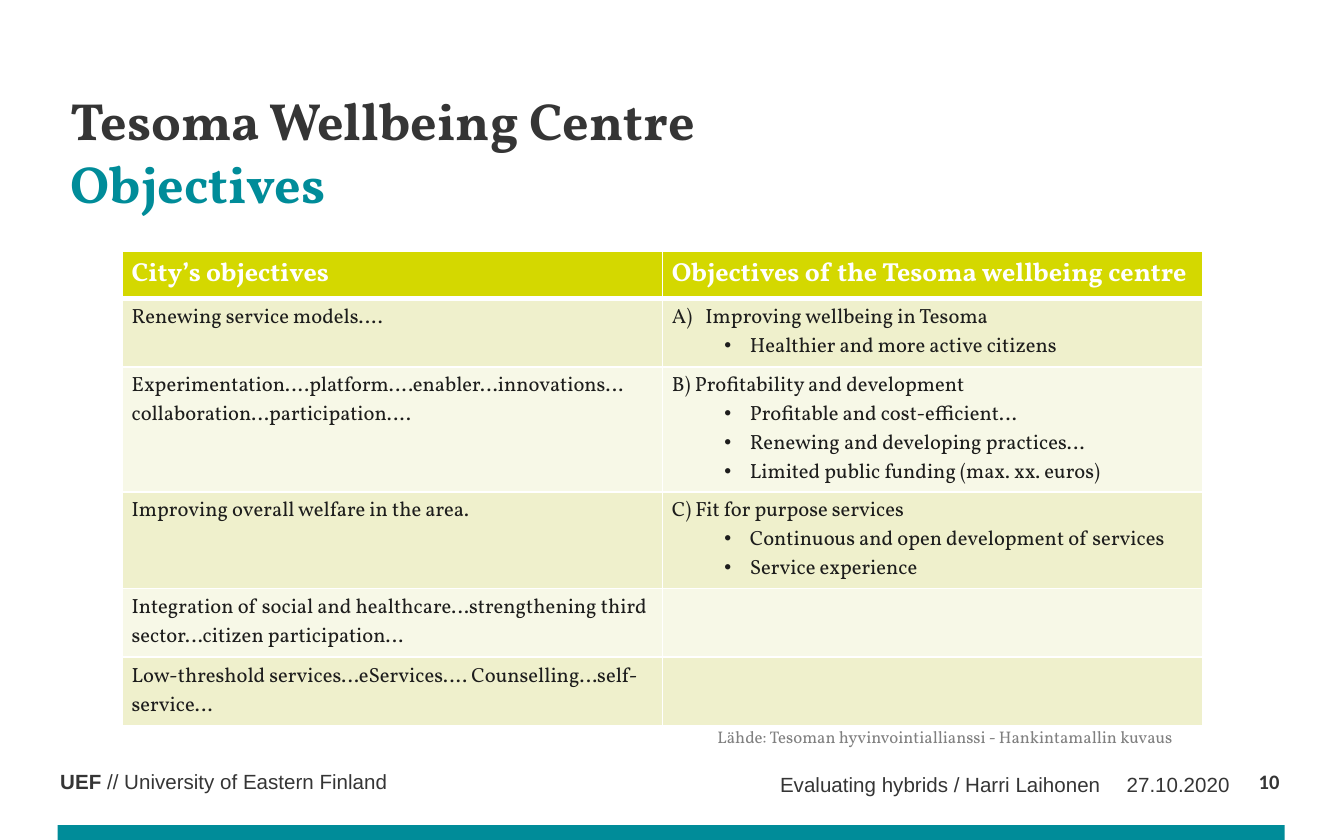
from lxml.etree import SubElement
from pptx import Presentation
from pptx.dml.color import RGBColor
from pptx.enum.shapes import MSO_SHAPE
from pptx.enum.text import MSO_ANCHOR, PP_ALIGN
from pptx.oxml.ns import qn
from pptx.util import Inches, Pt

DARK, TEAL, WHITE = "353535", "008C99", "FFFFFF"
HEADERS = ["City’s objectives", "Objectives of the Tesoma wellbeing centre"]
ROWS = [
    (0.51, "Renewing service models….",
     ["Improving wellbeing in Tesoma", "Healthier and more active citizens"]),
    (0.93, "Experimentation….platform….enabler...innovations…\vcollaboration…participation….",
     ["B) Profitability and development", "Profitable and cost-efficient…",
      "Renewing and developing practices…", "Limited public funding (max. xx. euros)"]),
    (0.72, "Improving overall welfare in the area.",
     ["C) Fit for purpose services", "Continuous and open development of services",
      "Service experience"]),
    (0.51, "Integration of social and healthcare…strengthening third sector…citizen participation…", []),
    (0.51, "Low-threshold services…eServices…. Counselling…self-service…", []),
]


def color(value):
    """Turn a hex string into a colour."""
    return RGBColor.from_string(value)


def style(target, size, name, value, bold=False):
    """Set the font of a paragraph or a span."""
    font = target.font
    font.size, font.name, font.bold = Pt(size), name, bold
    font.color.rgb = color(value)


def add_box(page, left, top, width, height, inset=None, anchor=MSO_ANCHOR.TOP, wrap=True):
    """Add a text box and return its text frame."""
    box = page.shapes.add_textbox(Inches(left), Inches(top), Inches(width), Inches(height))
    frame = box.text_frame
    frame.word_wrap, frame.vertical_anchor = wrap, anchor
    if inset is not None:
        frame.margin_left = frame.margin_right = Inches(inset)
        frame.margin_top = frame.margin_bottom = Inches(inset)
    return frame


def add_line(page, text, place, size, name, value, bold=False, align=PP_ALIGN.LEFT, **options):
    """Add a text box with one line and return its paragraph."""
    para = add_box(page, *place, **options).paragraphs[0]
    para.text, para.alignment = text, align
    style(para, size, name, value, bold)
    return para


def add_title(page):
    """Add the two-colour title."""
    para = add_box(page, 0.43, 0.6, 9.13, 0.92).paragraphs[0]
    para.line_spacing = Pt(34)
    for text, value in (("Tesoma Wellbeing Centre", DARK), ("Objectives", TEAL)):
        if para.runs:
            para.add_line_break()
        span = para.add_run()
        span.text = text
        style(span, 28, "Vollkorn", value, True)


def add_bar(page):
    """Add the teal bar at the foot of the page."""
    bar = page.shapes.add_shape(MSO_SHAPE.RECTANGLE, Inches(0.43), Inches(6.14),
                                Inches(9.13), Inches(0.13))
    bar.shadow.inherit = False
    bar.fill.solid()
    bar.fill.fore_color.rgb = color(TEAL)
    bar.line.fill.background()


def set_list(para, margin, indent, tag, **mark):
    """Give a paragraph a hanging bullet or number."""
    properties = para._p.get_or_add_pPr()
    properties.set("marL", str(Inches(margin)))
    properties.set("indent", str(Inches(indent)))
    bullet = SubElement(properties, qn(tag), **mark)
    default = properties.find(qn("a:defRPr"))
    if default is not None:
        default.addprevious(bullet)


def set_borders(cell, top, bottom):
    """Draw white borders of the given point widths at top and bottom."""
    properties = cell._tc.get_or_add_tcPr()
    for index, (side, width) in enumerate((("L", 1), ("R", 1), ("T", top), ("B", bottom))):
        line = SubElement(properties, qn(f"a:ln{side}"), w=str(Pt(width)))
        fill = SubElement(line, qn("a:solidFill"))
        SubElement(fill, qn("a:srgbClr"), val=WHITE)
        properties.insert(index, line)


def fill_cell(cell, lines, fill, size, value, header=False, below_header=False):
    """Fill one cell with a lead line and bulleted lines below it."""
    cell.margin_left = cell.margin_right = Inches(0.07)
    cell.margin_top = cell.margin_bottom = Inches(0.04)
    cell.fill.solid()
    cell.fill.fore_color.rgb = color(fill)
    set_borders(cell, 3 if below_header else 1, 3 if header else 1)
    frame = cell.text_frame
    for index, text in enumerate(lines or [""]):
        para = frame.add_paragraph() if index else frame.paragraphs[0]
        para.text = text
        style(para, size, "Vollkorn", value, header)
        if index:
            set_list(para, 0.58, -0.19, "a:buChar", char="•")


def add_objectives(page):
    """Add the table of objectives."""
    table = page.shapes.add_table(len(ROWS) + 1, 2, Inches(0.91), Inches(1.87),
                                  Inches(8.04), Inches(3.53)).table
    table.rows[0].height = Inches(0.35)
    for column, text in enumerate(HEADERS):
        table.columns[column].width = Inches(4.02)
        fill_cell(table.cell(0, column), [text], "D4D800", 14, WHITE, header=True)
    for row, (height, city, centre) in enumerate(ROWS, 1):
        table.rows[row].height = Inches(height)
        fill = "EFF0CC" if row % 2 else "F7F8E7"
        for column, lines in enumerate(([city], centre)):
            fill_cell(table.cell(row, column), lines, fill, 11, "1D1D1C", below_header=row == 1)
    lead = table.cell(1, 1).text_frame.paragraphs[0]
    set_list(lead, 0.25, -0.25, "a:buAutoNum", type="alphaUcParenR")


def add_footer(page):
    """Add the source, the organisation, the talk, the date and the page number."""
    add_line(page, "Lähde: Tesoman hyvinvointiallianssi - Hankintamallin kuvaus",
             (5.24, 5.36, 3.7, 0.25), 9, "Vollkorn", "808080", wrap=False)
    owner = add_line(page, "UEF", (0.35, 5.67, 3.86, 0.29), 11, "Arial", DARK)
    owner.runs[0].font.bold = True
    owner.add_run().text = " // University of Eastern Finland"
    for text, left, width in (("27.10.2020", 8.19, 0.96),
                              ("Evaluating hybrids / Harri Laihonen", 3.34, 4.85)):
        add_line(page, text, (left, 5.72, width, 0.23), 11, "Arial", DARK,
                 align=PP_ALIGN.RIGHT, inset=0, anchor=MSO_ANCHOR.MIDDLE)
    add_line(page, "10", (9.13, 5.72, 0.39, 0.23), 11, "Calibri", DARK, True,
             align=PP_ALIGN.RIGHT, inset=0)


def main():
    """Build the slide."""
    deck = Presentation()
    deck.slide_width, deck.slide_height = Inches(10), Inches(6.25)
    page = deck.slides.add_slide(deck.slide_layouts[6])
    add_bar(page)
    add_title(page)
    add_objectives(page)
    add_footer(page)
    deck.save("out.pptx")


if __name__ == "__main__":
    main()
